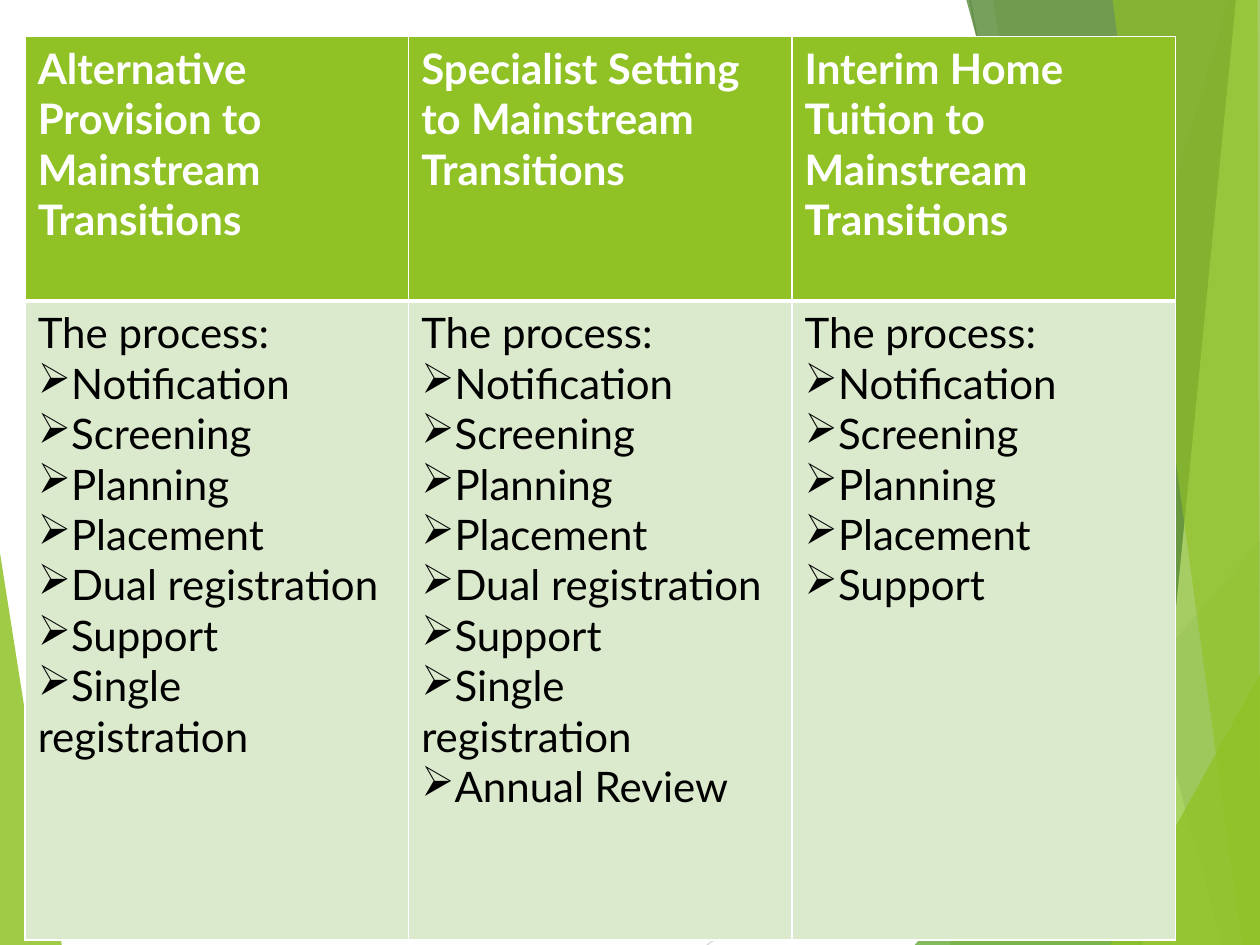
from lxml.etree import SubElement
from pptx import Presentation
from pptx.dml.color import RGBColor
from pptx.enum.shapes import MSO_CONNECTOR as Link
from pptx.oxml import parse_xml
from pptx.oxml.ns import nsdecls, qn
from pptx.util import Inches, Pt

WIDE, HIGH = 10, 7.5
LINES = [("D9D9D9", (5.61, HIGH), (WIDE, 4.57)),
         ("BFBFBF", (7.7, 0), (9.04, HIGH))]
SHARDS = [
    ("90C226", 30, [(9.75, 0), (7.54, HIGH), (WIDE, HIGH), (WIDE, 0)]),
    ("90C226", 20, [(7.88, 0), (9.19, HIGH), (WIDE, HIGH), (WIDE, 0)]),
    ("54A021", 72, [(7.26, HIGH), (WIDE, 4.29), (WIDE, HIGH)]),
    ("3F7819", 70, [(7.67, 0), (9.7, HIGH), (WIDE, HIGH), (WIDE, 0)]),
    ("C0E474", 70, [(9.81, 0), (9.07, HIGH), (WIDE, HIGH), (WIDE, 0)]),
    ("90C226", 65, [(8.83, 0), (9.86, HIGH), (WIDE, HIGH), (9.98, 0)]),
    ("90C226", 80, [(8.81, HIGH), (WIDE, 5.35), (WIDE, HIGH)]),
]
LEFT = ("90C226", 85, [(0, 4.39), (0.49, HIGH), (0, HIGH)])

START = ["Notification", "Screening", "Planning", "Placement"]
DUAL = START + ["Dual registration", "Support", "Single registration"]
COLUMNS = [
    ("Alternative Provision to Mainstream Transitions", DUAL),
    ("Specialist Setting to Mainstream Transitions", DUAL + ["Annual Review"]),
    ("Interim Home Tuition to Mainstream Transitions", START + ["Support"]),
]


def paint(fill, tone):
    """Set a solid fill from a hex string."""
    fill.solid()
    fill.fore_color.rgb = RGBColor.from_string(tone)


def add_shard(slide, tone, alpha, points):
    """Draw a see-through polygon."""
    spots = [(Inches(x), Inches(y)) for x, y in points]
    pen = slide.shapes.build_freeform(*spots[0])
    pen.add_line_segments(spots[1:], close=True)
    shard = pen.convert_to_shape()
    shard.shadow.inherit = False
    shard.line.fill.background()
    paint(shard.fill, tone)
    clr = shard._element.spPr.find(".//" + qn("a:srgbClr"))
    SubElement(clr, qn("a:alpha"), val=str(alpha * 1000))


def add_line(slide, tone, start, end):
    """Draw a thin straight line."""
    ends = [Inches(n) for n in start + end]
    line = slide.shapes.add_connector(Link.STRAIGHT, *ends)
    paint(line.line.fill, tone)
    line.line.width = Pt(0.75)
    SubElement(line._element.spPr, qn("a:effectLst"))


def add_edges(cell, top, bottom):
    """Give a cell white borders, with the top and bottom widths in points."""
    props = cell._tc.get_or_add_tcPr()
    for i, (side, size) in enumerate(zip("LRTB", (1, 1, top, bottom))):
        props.insert(i, parse_xml(
            f'<a:ln{side} {nsdecls("a")} w="{Pt(size)}"><a:solidFill>'
            f'<a:srgbClr val="FFFFFF"/></a:solidFill></a:ln{side}>'))


def add_bullet(para):
    """Put an arrow bullet before a paragraph."""
    props = para._p.get_or_add_pPr()
    props.set("marL", "0")
    props.set("indent", "0")
    props.insert(0, parse_xml(f'<a:buChar {nsdecls("a")} char="➢"/>'))


def fill_cell(cell, texts, tone, ink, bold):
    """Write paragraphs in a cell, with bullets after the first."""
    paint(cell.fill, tone)
    frame = cell.text_frame
    frame.text = "\n".join(texts)
    for i, para in enumerate(frame.paragraphs):
        font = para.font
        font.name, font.size, font.bold = "Lato", Pt(24), bold
        paint(font.fill, ink)
        if i:
            add_bullet(para)


def add_grid(slide):
    """Build the table of transitions."""
    box = [Inches(n) for n in (0.2, 0.29, 9.13, 7.17)]
    grid = slide.shapes.add_table(2, len(COLUMNS), *box).table
    for row, tall in zip(grid.rows, (2.1, 5.07)):
        row.height = Inches(tall)
    for i, (head, steps) in enumerate(COLUMNS):
        top, body = grid.cell(0, i), grid.cell(1, i)
        fill_cell(top, [head], "90C226", "FFFFFF", True)
        fill_cell(body, ["The process:"] + steps, "DBE9CD", "000000", False)
        add_edges(top, 1, 3)
        add_edges(body, 3, 1)


def main():
    """Build and save the slide."""
    deck = Presentation()
    deck.slide_width, deck.slide_height = Inches(WIDE), Inches(HIGH)
    slide = deck.slides.add_slide(deck.slide_layouts[6])
    add_shard(slide, *LEFT)
    for line in LINES:
        add_line(slide, *line)
    for shard in SHARDS:
        add_shard(slide, *shard)
    add_grid(slide)
    deck.save("out.pptx")


if __name__ == "__main__":
    main()
